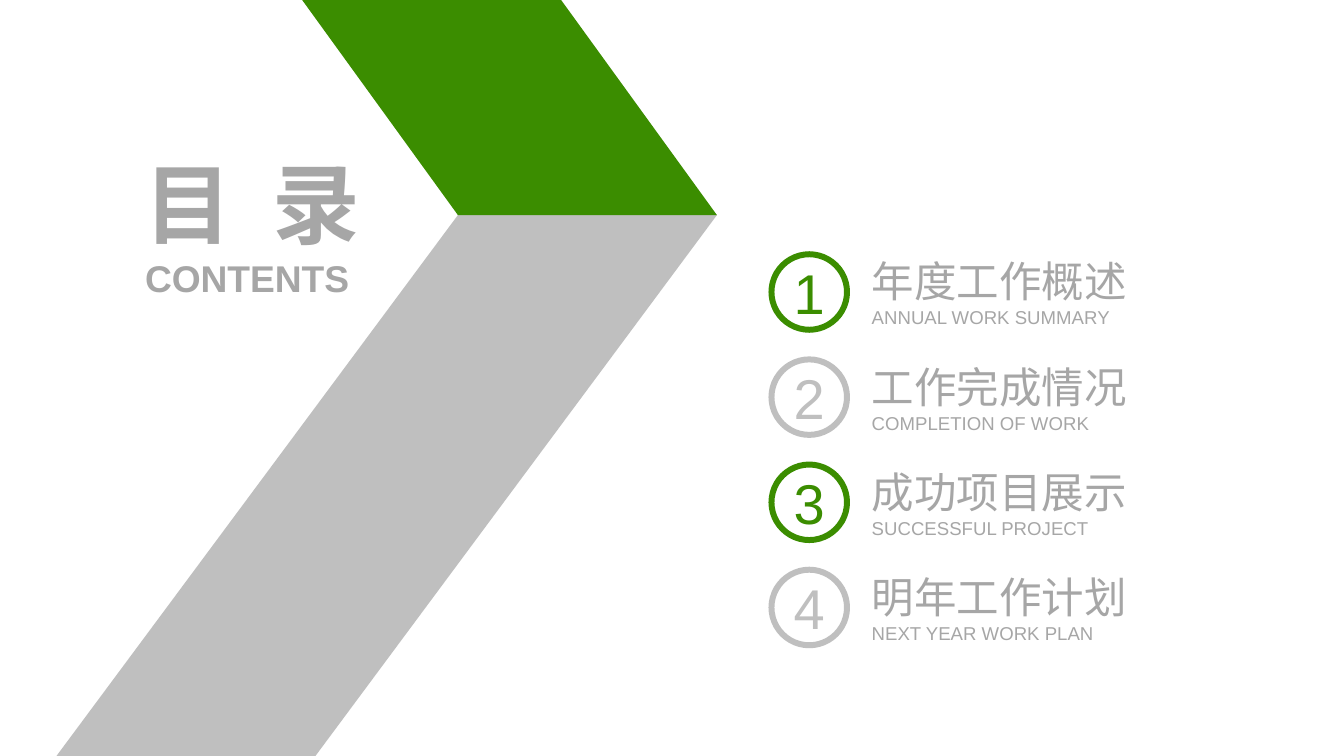
from lxml import etree
from pptx import Presentation
from pptx import util as u
from pptx.dml.color import RGBColor
from pptx.enum import shapes, text
from pptx.oxml.ns import qn

GREEN = RGBColor(0x3B, 0x8D, 0x00)
SILVER = RGBColor(0xBF, 0xBF, 0xBF)
GREY = RGBColor(0xA6, 0xA6, 0xA6)
WHITE = RGBColor(0xFF, 0xFF, 0xFF)

ITEMS = [
    ("年度工作概述", "ANNUAL WORK SUMMARY"),
    ("工作完成情况", "COMPLETION OF WORK"),
    ("成功项目展示", "SUCCESSFUL PROJECT"),
    ("明年工作计划", "NEXT YEAR WORK PLAN"),
]
TOP, PITCH = 33.63, 13.91


class Deck:
    """Draws styled elements on a slide, with lengths in percent of its size."""

    def __init__(self, wide, high, layout):
        self.prs = Presentation()
        self.prs.slide_width = u.Inches(wide)
        self.prs.slide_height = u.Inches(high)
        self.slide = self.prs.slides.add_slide(self.prs.slide_layouts[layout])
        self.font = "Arial"

    def across(self, share):
        return int(self.prs.slide_width * share / 100)

    def down(self, share):
        return int(self.prs.slide_height * share / 100)

    def box(self, x, y, w, h):
        return self.across(x), self.down(y), self.across(w), self.down(h)

    def letter(self, shape, words, sizes, color, bold=False,
               align=text.PP_ALIGN.CENTER, anchor=text.MSO_ANCHOR.MIDDLE):
        frame = shape.text_frame
        frame.text = words
        frame.word_wrap = True
        frame.auto_size = text.MSO_AUTO_SIZE.NONE
        frame.vertical_anchor = anchor
        frame.margin_left = frame.margin_right = 0
        frame.margin_top = frame.margin_bottom = 0
        for para, size in zip(frame.paragraphs, sizes):
            para.alignment = align
            para.space_before = u.Pt(0)
            font = para.runs[0].font
            font.name, font.size, font.bold = self.font, u.Pt(size), bold
            font.color.rgb = color

    def place(self, index, box):
        hold = self.slide.placeholders[index]
        hold.left, hold.top, hold.width, hold.height = self.box(*box)
        return hold

    def title(self, words, box, size, gap):
        hold = self.place(0, box)
        self.letter(hold, words, [size], GREY, bold=True)
        run = hold.text_frame.paragraphs[0].runs[0]
        run._r.get_or_add_rPr().set("spc", str(gap * 100))

    def label(self, words, box, size):
        shape = self.slide.shapes.add_textbox(*self.box(*box))
        self.letter(shape, words, [size], GREY, bold=True,
                    anchor=text.MSO_ANCHOR.TOP)

    def entry(self, index, lines, box):
        hold = self.place(index, box)
        self.letter(hold, "\n".join(lines), [32, 14], GREY,
                    align=text.PP_ALIGN.LEFT)
        for para in hold.text_frame.paragraphs:
            props = para._p.get_or_add_pPr()
            props.set("marL", "0")
            props.set("indent", "0")
            etree.SubElement(props, qn("a:buNone"))

    def badge(self, words, box, color):
        shape = self.slide.shapes.add_shape(
            shapes.MSO_SHAPE.OVAL, *self.box(*box))
        shape.shadow.inherit = False
        shape.fill.solid()
        shape.fill.fore_color.rgb = WHITE
        shape.line.color.rgb = color
        shape.line.width = u.Pt(4.5)
        self.letter(shape, words, [42.2], color)

    def band(self, points, color):
        spots = [(self.across(x), self.down(y)) for x, y in points]
        form = self.slide.shapes.build_freeform(*spots[0])
        form.add_line_segments(spots[1:], close=True)
        shape = form.convert_to_shape()
        shape.shadow.inherit = False
        shape.fill.solid()
        shape.fill.fore_color.rgb = color
        shape.line.fill.background()


def main():
    deck = Deck(14.06, 7.91, layout=4)
    deck.title("目 录", (9.32, 19.72, 18.92, 14.03), 66, gap=8)
    deck.label("CONTENTS", (9.03, 33.75, 18.71, 5.94), 28)

    fold = [(34.07, 28.45), (53.34, 28.45)]
    deck.band(fold + [(23.47, 100), (4.2, 100)], SILVER)
    deck.band(fold + [(41.75, 0), (22.48, 0)], GREEN)

    for row, lines in enumerate(ITEMS):
        y = TOP + row * PITCH
        color = SILVER if row % 2 else GREEN
        deck.badge(str(row + 1), (57.4, y, 5.62, 9.99), color)
        deck.entry(row + 1, lines, (64.86, y + 0.13, 21.05, 9.73))

    deck.prs.save("out.pptx")


if __name__ == "__main__":
    main()
